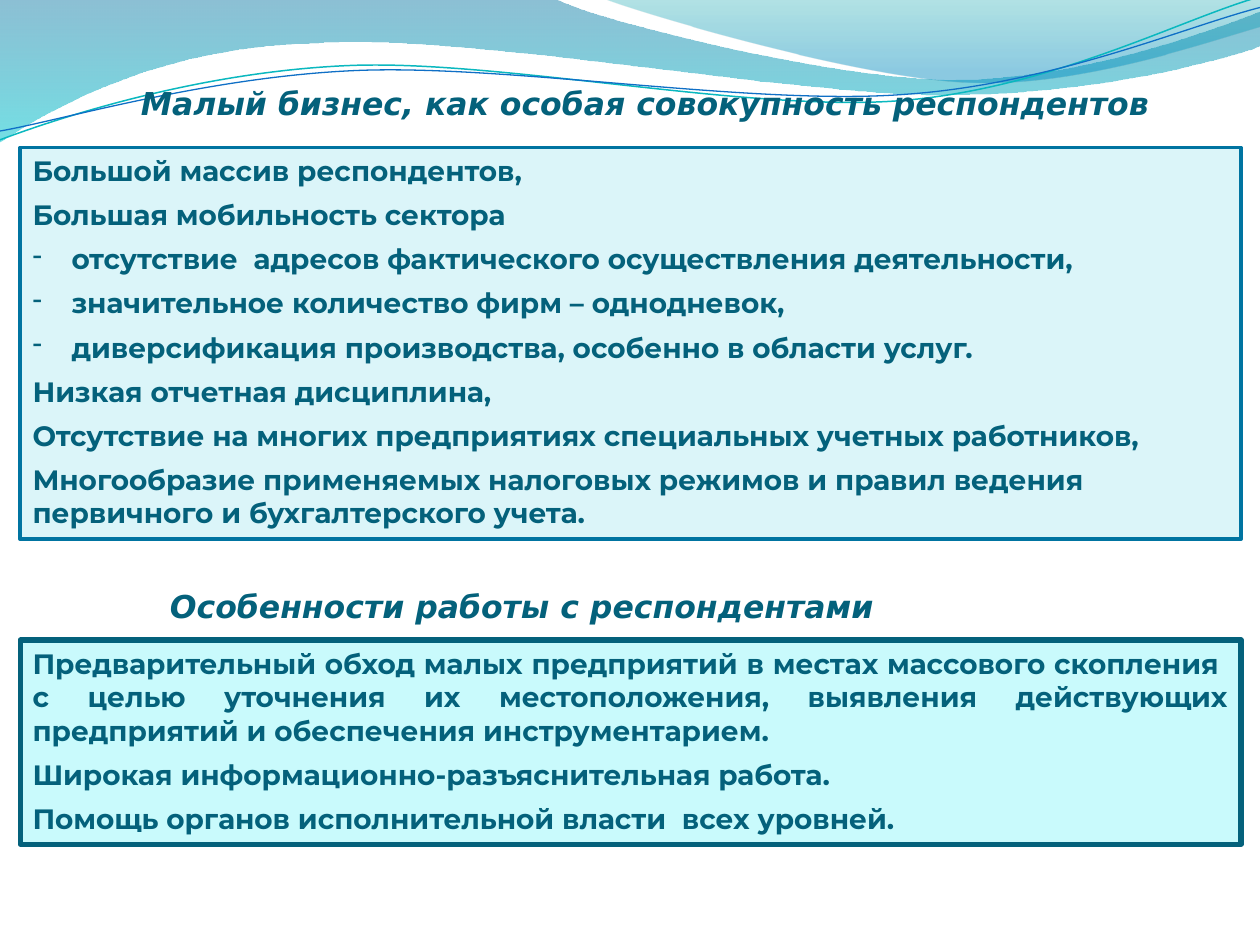
from math import cos, radians, sin

from lxml.etree import SubElement
from pptx import Presentation
from pptx.dml.color import RGBColor
from pptx.enum.shapes import MSO_SHAPE as Shape
from pptx.enum.text import MSO_ANCHOR as Anchor, MSO_AUTO_SIZE as AutoSize, PP_ALIGN as Align
from pptx.oxml.ns import qn
from pptx.util import Inches, Pt

INK = RGBColor(0x04, 0x61, 0x7B)
BLUE = RGBColor(0x00, 0x74, 0xA1)
CYAN = RGBColor(0x00, 0xC6, 0xCF)
TEAL = RGBColor(0x00, 0xA1, 0xA9)
SKY = RGBColor(0x00, 0x8B, 0xBF)
TEAL_LINE = RGBColor(0x0A, 0xB8, 0xBF)
BLUE_LINE = RGBColor(0x0F, 0x6F, 0xC6)
PALE = RGBColor(0xDB, 0xF5, 0xF9)
AQUA = RGBColor(0xC9, 0xFA, 0xFC)
TILT = 2.7

deck = Presentation()
deck.slide_width, deck.slide_height = Inches(10), Inches(7.5)
page = deck.slides.add_slide(deck.slide_layouts[6])


def draw_wave(start, segments, closed, tilt=0, center=(0, 0)):
    points = [start]
    for segment in segments:
        points.extend(zip(segment[::2], segment[1::2]))
    turn_cos, turn_sin = cos(radians(tilt)), sin(radians(tilt))
    offsets = [(x - center[0], y - center[1]) for x, y in points]
    points = [(Inches(center[0] + x * turn_cos - y * turn_sin),
               Inches(center[1] + x * turn_sin + y * turn_cos)) for x, y in offsets]
    builder = page.shapes.build_freeform(*points[0])
    builder.add_line_segments(points[1:], close=closed)
    wave = builder.convert_to_shape()
    wave.shadow.inherit = False
    wave.rotation = -tilt
    steps = list(wave._element.iter(qn("a:lnTo")))
    for segment in segments:
        count = len(segment) // 2
        used, steps = steps[:count], steps[count:]
        if count == 3:
            outline = used[0].getparent()
            curve = SubElement(outline, qn("a:cubicBezTo"))
            used[0].addprevious(curve)
            for step in used:
                curve.append(step[0])
                outline.remove(step)
    return wave


def write(box, text, font="Montserrat", size=16, italic=False, align=Align.LEFT, before=0, bullet=None):
    frame = box.text_frame
    para = frame.add_paragraph() if frame.text else frame.paragraphs[0]
    para.alignment = align
    para.space_before = Pt(before)
    span = para.add_run()
    span.text = text
    span.font.name = font
    span.font.size = Pt(size)
    span.font.bold = True
    span.font.italic = italic
    span.font.color.rgb = INK
    if bullet:
        props = para._p.get_or_add_pPr()
        props.set("marL", str(Inches(0.31)))
        props.set("indent", str(Inches(-0.43)))
        SubElement(props, qn("a:buFontTx"))
        SubElement(props, qn("a:buChar"), char=bullet)


filled_waves = [
    ((0, 0), [(4.4, -0.01), (4.76, 0.17, 6.64, 0.63, 7.58, 0.63), (8.53, 0.63, 9.58, 0.26, 10, 0.09),
              (10.01, 0.36), (9.83, 0.44, 8.7, 0.76, 7.46, 0.75), (6.22, 0.75, 3.82, 0.28, 2.57, 0.34),
              (1.29, 0.36, 0.46, 0.83, -0.01, 1.13), (0, 0)],
     [(0, BLUE, 45), (1, CYAN, 55)]),
    ((4.79, -0.01), [(5.09, 0.11, 6.82, 0.62, 7.69, 0.65), (8.56, 0.69, 9.61, 0.32, 10, 0.21),
                     (10, 0), (4.79, -0.01)],
     [(0, TEAL, 30), (0.8, SKY, 45)]),
]
for start, segments, stops in filled_waves:
    wave = draw_wave(start, segments, True)
    wave.line.fill.background()
    wave.fill.gradient()
    wave.fill.gradient_angle = 270
    for stop, (position, color, opacity) in zip(wave.fill.gradient_stops, stops):
        stop.position = position
        stop.color.rgb = color
    for tint, (position, color, opacity) in zip(wave._element.spPr.iter(qn("a:srgbClr")), stops):
        SubElement(tint, qn("a:alpha"), val=str(opacity * 1000))

line_waves = [
    ((0, 1.11), [(0.48, 0.93, 1.58, 0.57, 2.77, 0.52), (3.95, 0.47, 5.93, 0.89, 7.13, 0.8),
                 (8.33, 0.71, 9.38, 0.15, 9.98, -0.02)], (4.99, 0.57), TEAL_LINE, 0.85),
    ((0, 1.04), [(0.47, 0.96, 1.64, 0.61, 2.83, 0.56), (4.03, 0.51, 5.97, 0.84, 7.17, 0.75),
                 (8.36, 0.67, 9.41, 0.21, 10, 0.06)], (5, 0.59), BLUE_LINE, 0.75),
]
for start, segments, center, color, width in line_waves:
    wave = draw_wave(start, segments, False, tilt=TILT, center=center)
    wave.fill.background()
    wave.line.color.rgb = color
    wave.line.width = Pt(width)

headings = [
    (1.02, 0.62, 8.36, "Малый бизнес, как особая совокупность респондентов"),
    (1.25, 4.61, 6.8, "Особенности работы с респондентами"),
]
for left, top, width, text in headings:
    box = page.shapes.add_textbox(Inches(left), Inches(top), Inches(width), Inches(0.4))
    box.text_frame.word_wrap = True
    box.text_frame.auto_size = AutoSize.SHAPE_TO_FIT_TEXT
    write(box, text, font="DejaVu Sans", size=18, italic=True)

panels = [
    (1.17, 3.11, PALE, BLUE, 2, Align.LEFT, [
        ("Большой массив респондентов,", None),
        ("Большая мобильность сектора", None),
        ("отсутствие  адресов фактического осуществления деятельности,", "-"),
        ("значительное количество фирм – однодневок,", "-"),
        ("диверсификация производства, особенно в области услуг.", "-"),
        ("Низкая отчетная дисциплина,", None),
        ("Отсутствие на многих предприятиях специальных учетных работников,", None),
        ("Многообразие применяемых налоговых режимов и правил ведения "
         "первичного и бухгалтерского учета.", None),
    ]),
    (5.08, 1.62, AQUA, INK, 3, Align.JUSTIFY, [
        ("Предварительный обход малых предприятий в местах массового скопления  "
         "с целью уточнения их местоположения, выявления действующих "
         "предприятий и обеспечения инструментарием.", None),
        ("Широкая информационно-разъяснительная работа.", None),
        ("Помощь органов исполнительной власти  всех уровней.", None),
    ]),
]
for top, height, fill, border, weight, align, items in panels:
    panel = page.shapes.add_shape(Shape.RECTANGLE, Inches(0.16), Inches(top), Inches(9.69), Inches(height))
    panel.shadow.inherit = False
    panel.fill.solid()
    panel.fill.fore_color.rgb = fill
    panel.line.color.rgb = border
    panel.line.width = Pt(weight)
    panel.text_frame.word_wrap = True
    panel.text_frame.auto_size = AutoSize.SHAPE_TO_FIT_TEXT
    panel.text_frame.vertical_anchor = Anchor.TOP
    for text, bullet in items:
        write(panel, text, align=align, before=6, bullet=bullet)

deck.save("out.pptx")
